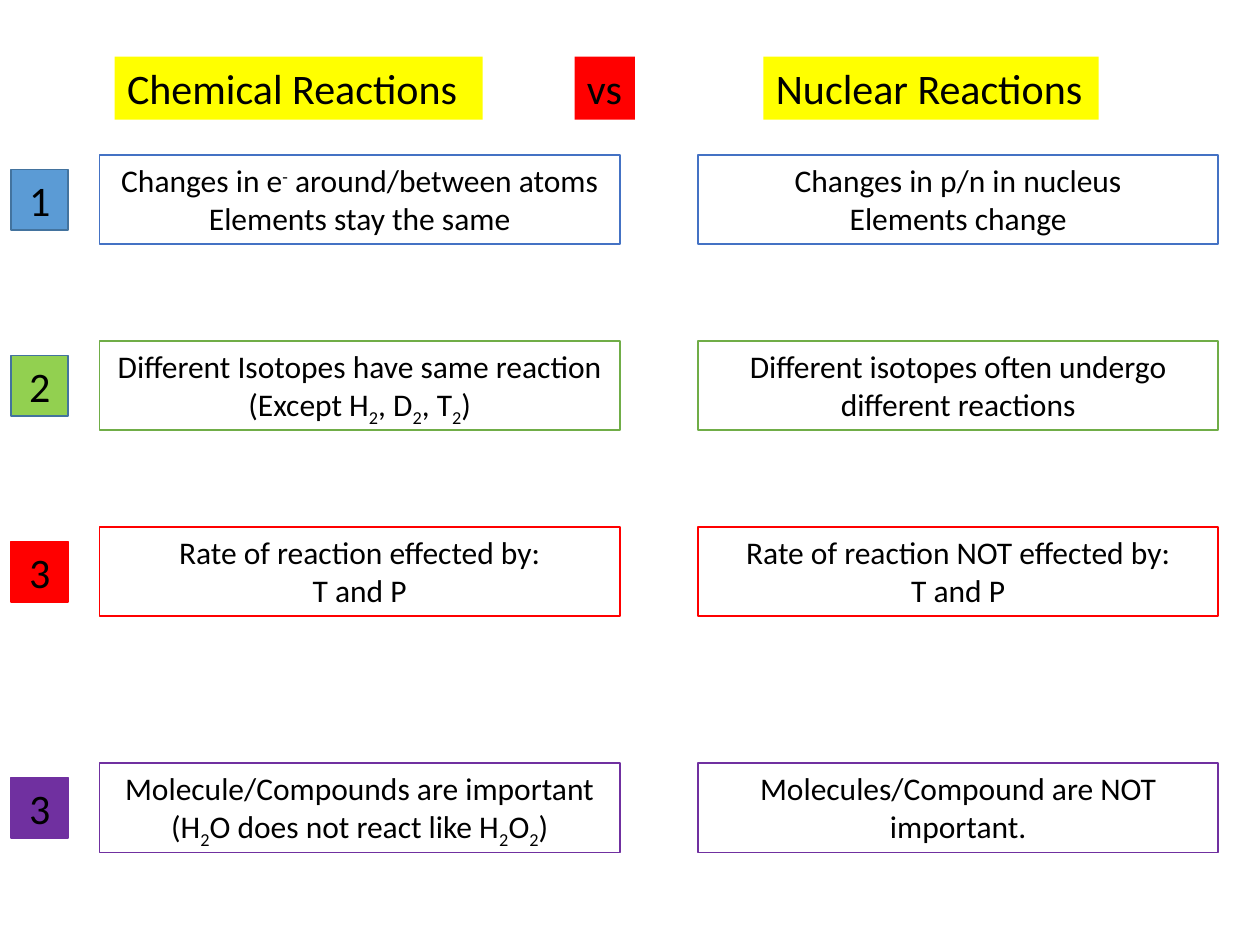
from pptx import Presentation
from pptx.dml.color import RGBColor
from pptx.enum.shapes import MSO_SHAPE
from pptx.enum.text import MSO_ANCHOR, PP_ALIGN
from pptx.util import Inches, Pt

RECTANGLE = MSO_SHAPE.RECTANGLE
TOP, MIDDLE = MSO_ANCHOR.TOP, MSO_ANCHOR.MIDDLE
LEFT, CENTER = PP_ALIGN.LEFT, PP_ALIGN.CENTER

BLACK = RGBColor(0x00, 0x00, 0x00)
WHITE = RGBColor(0xFF, 0xFF, 0xFF)
YELLOW = RGBColor(0xFF, 0xFF, 0x00)
RED = RGBColor(0xFF, 0x00, 0x00)
BLUE = RGBColor(0x44, 0x72, 0xC4)
LIGHT_BLUE = RGBColor(0x5B, 0x9B, 0xD5)
DARK_BLUE = RGBColor(0x43, 0x73, 0x9E)
GREEN = RGBColor(0x70, 0xAD, 0x47)
LIGHT_GREEN = RGBColor(0x92, 0xD0, 0x50)
PURPLE = RGBColor(0x70, 0x30, 0xA0)

BASELINES = {"^": "30000", "_": "-25000"}

presentation = Presentation()
presentation.slide_width = Inches(10)
presentation.slide_height = Inches(7.5)
slide = presentation.slides.add_slide(presentation.slide_layouts[6])


def add_box(left, top, width, height, lines, size, fill, line=None,
            align=CENTER, anchor=TOP):
    shape = slide.shapes.add_shape(
        RECTANGLE, Inches(left), Inches(top), Inches(width), Inches(height))
    shape.shadow.inherit = False
    shape.fill.solid()
    shape.fill.fore_color.rgb = fill
    if line is None:
        shape.line.fill.background()
    else:
        shape.line.color.rgb = line
        shape.line.width = Pt(1)
    frame = shape.text_frame
    frame.word_wrap = True
    frame.vertical_anchor = anchor
    if align == LEFT:
        frame.margin_right = 0
    for index, text in enumerate(lines):
        paragraph = frame.paragraphs[0] if index == 0 else frame.add_paragraph()
        paragraph.alignment = align
        paragraph.font.name = "Calibri"
        paragraph.font.size = Pt(size)
        paragraph.font.color.rgb = BLACK
        for part in text.split("|"):
            run = paragraph.add_run()
            run.text = part.lstrip("^_")
            if part[0] in BASELINES:
                run.font._element.set("baseline", BASELINES[part[0]])


HEADINGS = [
    (0.91, 2.92, "Chemical Reactions", YELLOW),
    (4.56, 0.48, "vs", RED),
    (6.06, 2.66, "Nuclear Reactions", YELLOW),
]
for left, width, text, fill in HEADINGS:
    add_box(left, 0.45, width, 0.5, [text], 24, fill, align=LEFT)

FIRST_ROW, ROW_STEP = 1.23, 1.476
ROWS = [
    (0, "1", LIGHT_BLUE, DARK_BLUE, BLUE,
     ["Changes in e|^-| around/between atoms", "Elements stay the same"],
     ["Changes in p/n in nucleus", "Elements change"]),
    (1, "2", LIGHT_GREEN, DARK_BLUE, GREEN,
     ["Different Isotopes have same reaction", "(Except H|_2|, D|_2|, T|_2|)"],
     ["Different isotopes often undergo different reactions"]),
    (2, "3", RED, RED, RED,
     ["Rate of reaction effected by:", "T and P"],
     ["Rate of reaction NOT effected by:", "T and P"]),
    (3.27, "3", PURPLE, PURPLE, PURPLE,
     ["Molecule/Compounds are important",
      "(H|_2|O does not react like H|_2|O|_2|)"],
     ["Molecules/Compound are NOT important."]),
]
for step, number, badge_fill, badge_line, color, chemical, nuclear in ROWS:
    top = FIRST_ROW + step * ROW_STEP
    add_box(0.09, top + 0.115, 0.45, 0.48, [number], 24, badge_fill, badge_line,
            anchor=MIDDLE)
    for left, lines in [(0.79, chemical), (5.54, nuclear)]:
        add_box(left, top, 4.13, 0.71, lines, 18, WHITE, color)

presentation.save("out.pptx")
